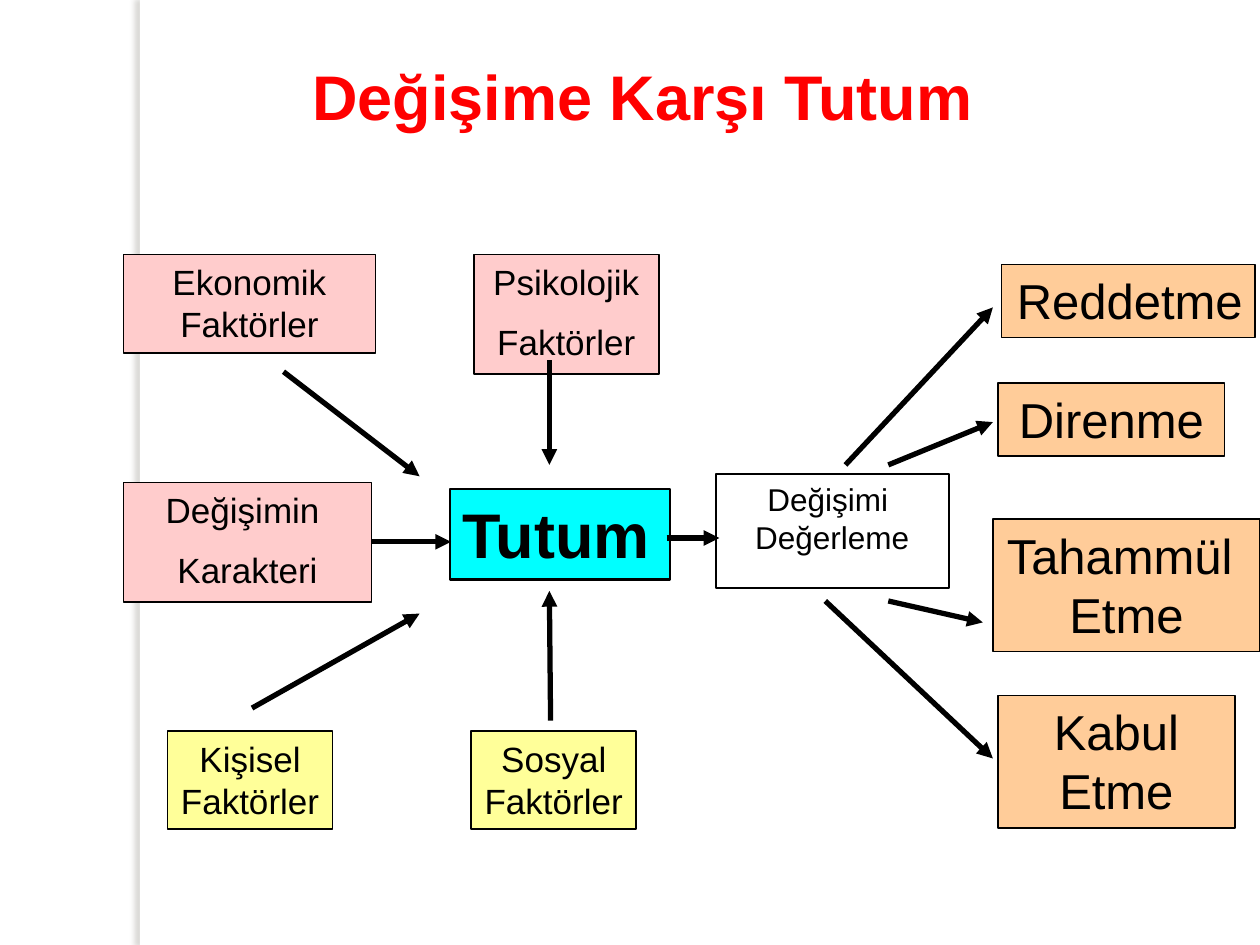
from lxml import etree
from pptx import Presentation
from pptx.dml.color import RGBColor
from pptx.enum.shapes import MSO_CONNECTOR, MSO_SHAPE
from pptx.enum.text import MSO_ANCHOR, PP_ALIGN
from pptx.oxml import parse_xml
from pptx.oxml.ns import nsdecls, qn
from pptx.util import Inches, Pt

RECT = MSO_SHAPE.RECTANGLE
STRAIGHT = MSO_CONNECTOR.STRAIGHT
TOP, MIDDLE = MSO_ANCHOR.TOP, MSO_ANCHOR.MIDDLE
LEFT, CENTER, RIGHT = PP_ALIGN.LEFT, PP_ALIGN.CENTER, PP_ALIGN.RIGHT
PINK, YELLOW, ORANGE, CYAN, WHITE = "FFCCCC", "FFFF99", "FFCC99", "00FFFF", "FFFFFF"
BLACK, RED = "000000", "FF0000"


def rgb(value):
    return RGBColor.from_string(value)


def write(tf, lines, size, color=BLACK, bold=False, align=CENTER, gap=0):
    for i, line in enumerate(lines):
        p = tf.paragraphs[0] if i == 0 else tf.add_paragraph()
        p.alignment = align
        if i:
            p.space_before = Pt(gap)
        r = p.add_run()
        r.text = line
        r.font.name = "Arial"
        r.font.size = Pt(size)
        r.font.bold = bold
        r.font.color.rgb = rgb(color)


prs = Presentation()
prs.slide_width, prs.slide_height = Inches(10), Inches(7.5)
s = prs.slides.add_slide(prs.slide_layouts[6])

# Vertical strip with a soft shadow to its left
strip = s.shapes.add_shape(RECT, Inches(1.11), 0, Inches(0.08), Inches(7.5))
strip.fill.solid()
strip.fill.fore_color.rgb = rgb(WHITE)
strip.line.fill.background()
strip.shadow.inherit = False
strip._element.spPr.find(qn("a:effectLst")).append(parse_xml(
    f'<a:outerShdw {nsdecls("a")} blurRad="{Pt(3)}" dist="{Pt(3)}" dir="10800000" '
    'algn="tl" rotWithShape="0"><a:srgbClr val="736F63"><a:alpha val="25000"/>'
    '</a:srgbClr></a:outerShdw>'))

# Boxes: left, top, width, height, fill, line width, lines, size, bold, align, gap
boxes = [
    (0.98, 2.02, 2, 0.78, PINK, 1, ["Ekonomik Faktörler"], 20, False, CENTER, 0),
    (0.98, 3.83, 1.97, 0.95, PINK, 1, ["Değişimin ", "Karakteri"], 20, False, CENTER, 10),
    (1.33, 5.8, 1.31, 0.78, YELLOW, 1, ["Kişisel", "Faktörler"], 20, False, CENTER, 0),
    (3.57, 3.88, 1.75, 0.72, CYAN, 1.25, ["Tutum"], 36, True, LEFT, 0),
    (3.76, 2.02, 1.47, 0.95, PINK, 1, ["Psikolojik", "Faktörler"], 20, False, CENTER, 10),
    (3.74, 5.8, 1.31, 0.78, YELLOW, 1, ["Sosyal", "Faktörler"], 20, False, CENTER, 0),
    (5.68, 3.76, 1.85, 0.91, WHITE, 1, ["Değişimi ", "Değerleme"], 18, False, CENTER, 0),
    (7.95, 2.1, 2.01, 0.58, ORANGE, 0.75, ["Reddetme"], 28, False, RIGHT, 0),
    (7.92, 3.04, 1.8, 0.58, ORANGE, 1, ["Direnme"], 28, False, CENTER, 0),
    (7.88, 4.12, 2.12, 1.05, ORANGE, 1, ["Tahammül ", "Etme"], 28, False, CENTER, 0),
    (7.92, 5.52, 1.88, 1.05, ORANGE, 1, ["Kabul", "Etme"], 28, False, CENTER, 0),
]
for x, y, w, h, fill, weight, lines, size, bold, align, gap in boxes:
    box = s.shapes.add_shape(RECT, Inches(x), Inches(y), Inches(w), Inches(h))
    box.shadow.inherit = False
    box.fill.solid()
    box.fill.fore_color.rgb = rgb(fill)
    box.line.color.rgb = rgb(BLACK)
    box.line.width = Pt(weight)
    tf = box.text_frame
    tf.vertical_anchor = TOP
    tf.word_wrap = len(lines) == 1
    write(tf, lines, size, bold=bold, align=align, gap=gap)

# Arrows: from x, y to x, y
arrows = [
    (2.25, 2.95, 3.33, 3.78),
    (2.95, 4.3, 3.58, 4.3),
    (4.36, 2.86, 4.36, 3.69),
    (2, 5.62, 3.33, 4.87),
    (4.37, 5.72, 4.36, 4.69),
    (5.29, 4.27, 5.71, 4.27),
    (6.71, 3.69, 7.88, 2.44),
    (7.05, 3.69, 7.88, 3.35),
    (7.05, 4.77, 7.8, 4.94),
    (6.55, 4.77, 7.88, 6.02),
]
for ends in arrows:
    arrow = s.shapes.add_connector(STRAIGHT, *map(Inches, ends))
    arrow.line.color.rgb = rgb(BLACK)
    arrow.line.width = Pt(3)
    etree.SubElement(arrow.line._get_or_add_ln(), qn("a:tailEnd"), type="triangle")
    etree.SubElement(arrow._element.spPr, qn("a:effectLst"))

# Title
title = s.shapes.add_textbox(Inches(1.61), Inches(0.36), Inches(6.98), Inches(0.8))
tf = title.text_frame
tf.word_wrap = True
tf.vertical_anchor = MIDDLE
write(tf, ["Değişime Karşı Tutum"], 36, RED, bold=True)

prs.save("out.pptx")
